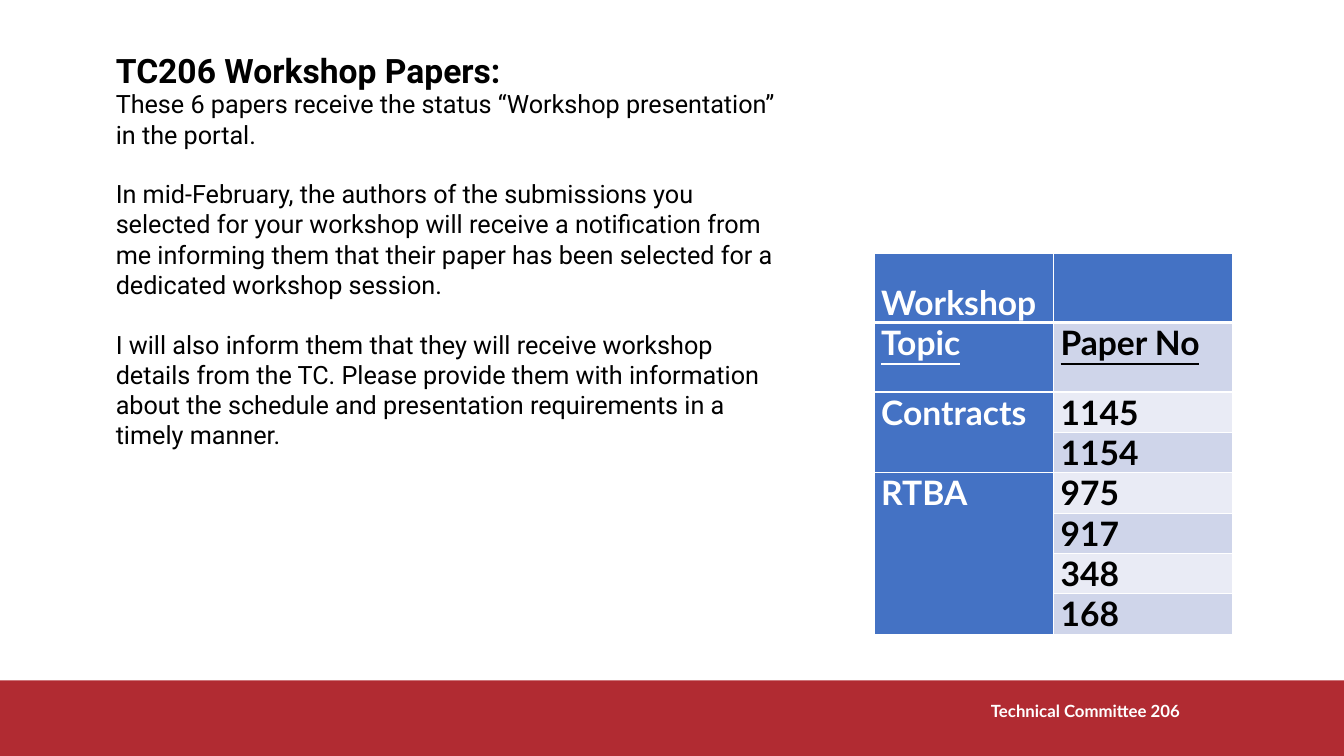
import pptx
import pptx.util
import pptx.dml.color
import pptx.enum.shapes
import pptx.enum.text
import pptx.oxml
import pptx.oxml.ns

UNIT = pptx.util.Inches(1) / 12
WIDE, HIGH = 160, 90
HUES = {"red": "B12B32", "blue": "4472C4", "dark": "CFD5EA",
        "pale": "E9EBF5", "white": "FFFFFF", "black": "000000"}
ALIGN = pptx.enum.text.PP_ALIGN
ANCHOR = pptx.enum.text.MSO_ANCHOR
HEAD = {"name": "Roboto", "size": pptx.util.Pt(24), "bold": True}
BODY = {"name": "Roboto", "size": pptx.util.Pt(18), "bold": False}
FOOT = {"name": "Lato", "size": pptx.util.Pt(12), "bold": True}
CELL = {"name": "Lato", "size": pptx.util.Pt(24), "bold": True}
TEXTS = [
    "These 6 papers receive the status “Workshop presentation” in the portal.",
    "In mid-February, the authors of the submissions you selected for your "
    "workshop will receive a notification from me informing them that their "
    "paper has been selected for a dedicated workshop session.",
    "I will also inform them that they will receive workshop details from the "
    "TC. Please provide them with information about the schedule and "
    "presentation requirements in a timely manner.",
]
ROWS = [("Workshop", ""), ("Topic", "Paper No"), ("Contracts", "1145"),
        ("", "1154"), ("RTBA", "975"), ("", "917"), ("", "348"), ("", "168")]
SPANS = [(2, 3), (4, 7)]


def grid(*cells):
    """Turn grid counts into lengths."""
    return [pptx.util.Emu(round(cell * UNIT)) for cell in cells]


def hue(name):
    """Look up a colour by name."""
    return pptx.dml.color.RGBColor.from_string(HUES[name])


def apply(thing, form):
    """Set each value of a format on a thing."""
    for key, value in form.items():
        setattr(thing, key, value)


def place(shape, cells):
    """Move a shape to its spot on the grid."""
    apply(shape, dict(zip(("left", "top", "width", "height"), grid(*cells))))


def write(frame, texts, form, tint, gap=0, align=ALIGN.LEFT):
    """Fill a frame with evenly spaced paragraphs."""
    for rank, text in enumerate(texts):
        para = frame.add_paragraph() if rank else frame.paragraphs[0]
        para.text = text
        apply(para, {"alignment": align, "line_spacing": 1.0,
                     "space_before": pptx.util.Pt(gap if rank else 0)})
        apply(para.font, form)
        para.font.color.rgb = hue(tint)


def add_band(slide):
    """Draw the band along the foot of the slide."""
    band = slide.shapes.add_shape(
        pptx.enum.shapes.MSO_SHAPE.RECTANGLE, *grid(0, 81, WIDE, 9))
    band.shadow.inherit = False
    band.fill.solid()
    band.fill.fore_color.rgb = hue("red")
    band.line.fill.background()


def add_head(slide, cells, text):
    """Set the title in its placeholder."""
    title = slide.shapes.title
    place(title, cells)
    frame = title.text_frame
    apply(frame, {"vertical_anchor": ANCHOR.TOP, "word_wrap": True,
                  "auto_size": pptx.enum.text.MSO_AUTO_SIZE.NONE})
    write(frame, [text], HEAD, "black")


def add_text(slide, cells, texts, form, tint, anchor=ANCHOR.TOP, **style):
    """Add a wrapped text box without upright margins."""
    frame = slide.shapes.add_textbox(*grid(*cells)).text_frame
    apply(frame, {"word_wrap": True, "vertical_anchor": anchor,
                  "margin_top": 0, "margin_bottom": 0})
    write(frame, texts, form, tint, **style)


def edge(cell, base):
    """Rule the four sides of a cell in white."""
    props = cell._tc.get_or_add_tcPr()
    space = pptx.oxml.ns.nsdecls("a")
    for rank, side in enumerate("LRTB"):
        width = pptx.util.Pt(base if side == "B" else 1)
        props.insert(rank, pptx.oxml.parse_xml(
            f'<a:ln{side} {space} w="{width}"><a:solidFill>'
            f'<a:srgbClr val="{HUES["white"]}"/></a:solidFill></a:ln{side}>'))


def add_cell(cell, text, row, col):
    """Fill, frame and write one table cell."""
    key = row == 0 or col == 0
    apply(cell, {"margin_left": grid(0.86)[0], "margin_right": grid(0.86)[0],
                 "margin_top": 0, "margin_bottom": 0,
                 "vertical_anchor": ANCHOR.TOP if row else ANCHOR.BOTTOM})
    cell.fill.solid()
    cell.fill.fore_color.rgb = hue("blue" if key else ("pale", "dark")[row % 2])
    edge(cell, 1 if row else 3)
    write(cell.text_frame, [text], {**CELL, "underline": row == 1},
          "white" if key else "black")


def add_list(slide, left, top, width):
    """Build the table of workshop papers."""
    highs = [8.28] * 2 + [4.8] * (len(ROWS) - 2)
    table = slide.shapes.add_table(
        len(ROWS), 2, *grid(left, top, width, sum(highs))).table
    for col in table.columns:
        col.width = grid(width / 2)[0]
    for row, pair in enumerate(ROWS):
        table.rows[row].height = grid(highs[row])[0]
        for col, text in enumerate(pair):
            add_cell(table.cell(row, col), text, row, col)
    for first, last in SPANS:
        table.cell(first, 0).merge(table.cell(last, 0))


def main():
    """Build the slide and save it."""
    deck = pptx.Presentation()
    apply(deck, dict(zip(("slide_width", "slide_height"), grid(WIDE, HIGH))))
    slide = deck.slides.add_slide(deck.slide_layouts[5])
    add_band(slide)
    add_text(slide, (109.44, 82.8, 39.6, 3.6), ["Technical Committee 206"],
             FOOT, "white", ANCHOR.MIDDLE, align=ALIGN.CENTER)
    add_head(slide, (12.6, 5.28, 81.84, 5.28), "TC206 Workshop Papers:")
    add_text(slide, (12.6, 10.56, 81.84, 44.4), TEXTS, BODY, "black", gap=21)
    add_list(slide, 104.04, 30.12, 42.72)
    deck.save("out.pptx")


if __name__ == "__main__":
    main()
